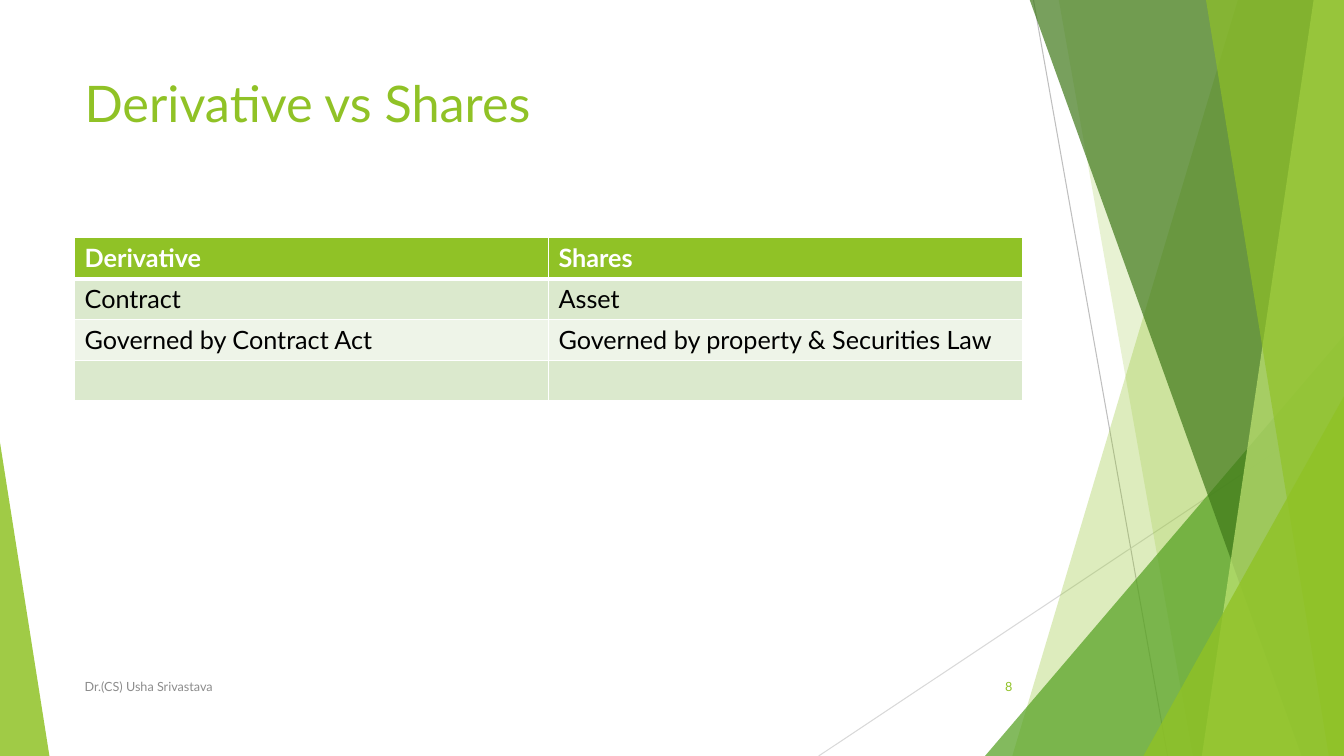
"""Build the Derivative vs Shares comparison slide."""
from dataclasses import dataclass

from lxml import etree
from pptx import Presentation
from pptx import util as u
from pptx.dml.color import RGBColor
from pptx.enum import shapes, text
from pptx.oxml.ns import qn

PX = 9144
WIDTH, HEIGHT = 1333, 750


@dataclass(frozen=True)
class Theme:
    font: str = "Lato"
    title_size: int = 36
    table_size: int = 18
    footer_size: int = 9
    green: str = "90C226"
    leaf: str = "54A021"
    forest: str = "3F7819"
    lime: str = "C0E474"
    grey: str = "8C8C8C"
    rule: str = "BFBFBF"
    faint_rule: str = "D9D9D9"
    white: str = "FFFFFF"
    black: str = "000000"
    band_dark: str = "DBE9CD"
    band_light: str = "EEF4E8"


theme = Theme()


def write(frame, words, size, color, bold=False, align=text.PP_ALIGN.LEFT):
    paragraph = frame.paragraphs[0]
    paragraph.alignment = align
    run = paragraph.add_run()
    run.text = words
    run.font.name = theme.font
    run.font.size = u.Pt(size)
    run.font.bold = bold
    run.font.color.rgb = RGBColor.from_string(color)


deck = Presentation()
deck.slide_width, deck.slide_height = WIDTH * PX, HEIGHT * PX
slide = deck.slides.add_slide(deck.slide_layouts[6])

for ends, color in [((1025, 0, 1158, 750), theme.rule), ((1333, 403, 812, 750), theme.faint_rule)]:
    ray = slide.shapes.add_connector(shapes.MSO_CONNECTOR.STRAIGHT, *[end * PX for end in ends])
    ray.line.color.rgb = RGBColor.from_string(color)
    ray.line.width = u.Pt(0.75)
    etree.SubElement(ray._element.spPr, qn("a:effectLst"))

# Bands give the left edge at top and bottom; triangles give left, top, width and apex.
facets = [
    ("band", (1228, 1004), theme.green, 30),
    ("band", (1050, 1183), theme.green, 20),
    ("triangle", (977, 333, 356, 1), theme.leaf, 72),
    ("band", (1021, 1291), theme.forest, 70),
    ("band", (1303, 1192), theme.lime, 70),
    ("band", (1196, 1318), theme.green, 65),
    ("triangle", (1134, 393, 199, 1), theme.green, 80),
    ("triangle", (0, 439, 49, 0), theme.green, 85),
]
for kind, extent, color, opacity in facets:
    if kind == "band":
        top_x, bottom_x = extent
        outline = slide.shapes.build_freeform(top_x, -1, scale=PX)
        outline.add_line_segments([(WIDTH, -1), (WIDTH, HEIGHT), (bottom_x, HEIGHT)])
        facet = outline.convert_to_shape()
    else:
        left, top, width, apex = extent
        facet = slide.shapes.add_shape(
            shapes.MSO_SHAPE.ISOSCELES_TRIANGLE,
            left * PX, top * PX, width * PX, (HEIGHT - top) * PX)
        facet.adjustments[0] = apex
    facet.shadow.inherit = False
    facet.line.fill.background()
    facet.fill.solid()
    facet.fill.fore_color.rgb = RGBColor.from_string(color)
    tint = facet._element.spPr.find(qn("a:solidFill")).find(qn("a:srgbClr"))
    etree.SubElement(tint, qn("a:alpha"), val=str(opacity * 1000))

top, middle = text.MSO_ANCHOR.TOP, text.MSO_ANCHOR.MIDDLE
left, right = text.PP_ALIGN.LEFT, text.PP_ALIGN.RIGHT
for words, place, size, color, anchor, align in [
    ("Derivative vs Shares", (74, 67, 940, 144), theme.title_size, theme.green, top, left),
    ("Dr.(CS) Usha Srivastava", (74, 661, 689, 40), theme.footer_size, theme.grey, middle, left),
    ("8", (939, 661, 75, 40), theme.footer_size, theme.green, middle, right),
]:
    frame = slide.shapes.add_textbox(*[length * PX for length in place]).text_frame
    frame.word_wrap = True
    frame.vertical_anchor = anchor
    write(frame, words, size, color, align=align)

comparison = [
    ("Derivative", "Shares"),
    ("Contract", "Asset"),
    ("Governed by Contract Act", "Governed by property & Securities Law"),
    ("", ""),
]
row_fills = [theme.green, theme.band_dark, theme.band_light, theme.band_dark]
table = slide.shapes.add_table(4, 2, 74 * PX, 236 * PX, 940 * PX, 162 * PX).table
for row, (entries, fill) in enumerate(zip(comparison, row_fills)):
    header = row == 0
    for column, entry in enumerate(entries):
        cell = table.cell(row, column)
        for side in ("lnL", "lnR", "lnT", "lnB"):
            thick = (header and side == "lnB") or (row == 1 and side == "lnT")
            border = etree.SubElement(
                cell._tc.get_or_add_tcPr(), qn(f"a:{side}"), w=str(u.Pt(3 if thick else 1)))
            paint = etree.SubElement(border, qn("a:solidFill"))
            etree.SubElement(paint, qn("a:srgbClr"), val=theme.white)
        cell.fill.solid()
        cell.fill.fore_color.rgb = RGBColor.from_string(fill)
        if entry:
            write(cell.text_frame, entry, theme.table_size,
                  theme.white if header else theme.black, bold=header)

deck.save("out.pptx")
